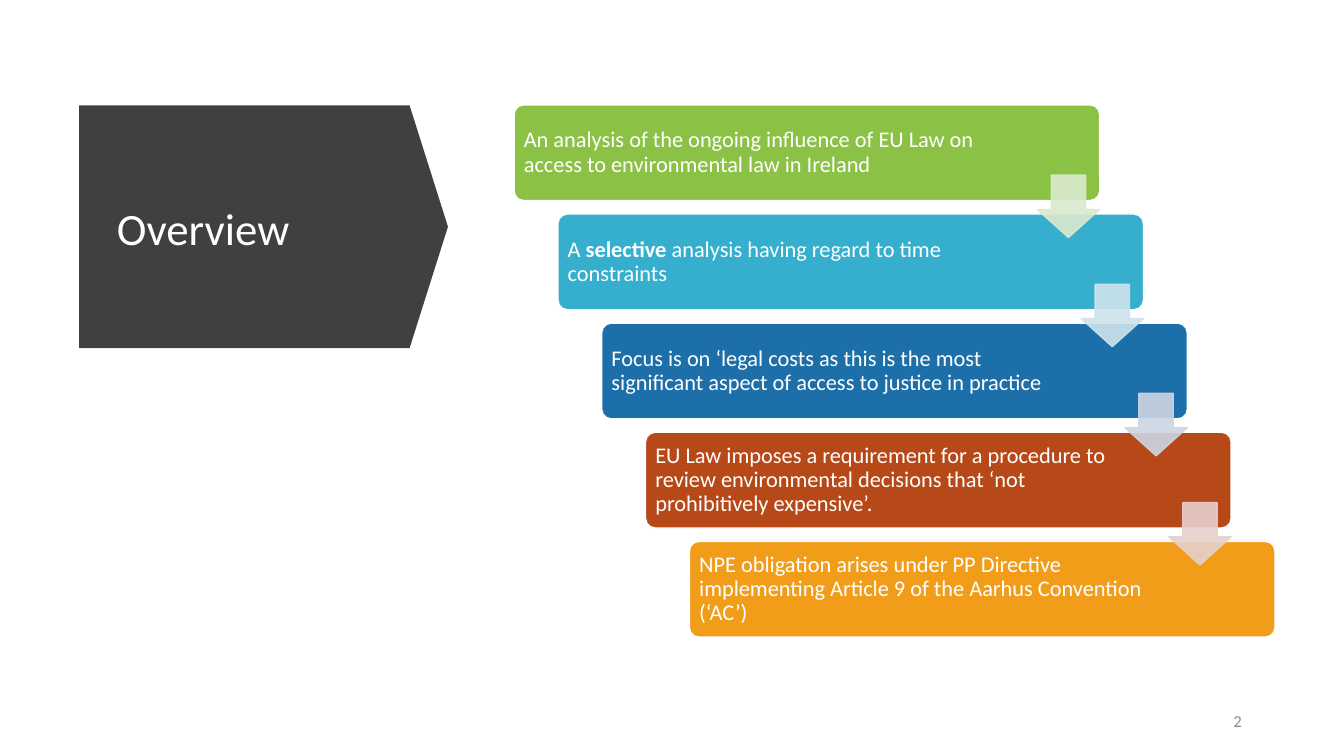
from dataclasses import dataclass

from lxml.etree import SubElement
from pptx import Presentation
from pptx.dml.color import RGBColor
from pptx.enum.shapes import MSO_SHAPE
from pptx.enum.text import MSO_ANCHOR, MSO_AUTO_SIZE, PP_ALIGN
from pptx.oxml.ns import qn
from pptx.util import Pt


@dataclass(frozen=True)
class Theme:
    font: str = "Calibri"
    title_size: int = 32
    body_size: int = 16
    number_size: int = 12
    white: str = "FFFFFF"
    banner: str = "404040"
    number: str = "8C8C8C"
    cards: tuple = ("8BC145", "36AFCE", "1D6FA9", "B74919", "F19D19")
    arrows: tuple = ("DAE9CF", "CEE3ED", "CDD5E2", "E6D0CC")
    arrow_opacity: int = 90


# Each step is a list of (text, bold) runs.
STEPS = [
    [("An analysis of the ongoing influence of EU Law on access to environmental law in Ireland", False)],
    [("A ", False), ("selective", True), (" analysis having regard to time constraints", False)],
    [("Focus is on ‘legal costs as this is the most significant aspect of access to justice in practice", False)],
    [("EU Law imposes a requirement for a procedure to review environmental decisions that "
      "‘not prohibitively expensive’.", False)],
    [("NPE obligation arises under PP Directive implementing Article 9 of the Aarhus Convention (‘AC’)", False)],
]

FIRST_LEFT, FIRST_TOP = 367.2, 74.9
STEP_RIGHT, STEP_DOWN = 31.3, 77.95
CARD_WIDTH, CARD_HEIGHT = 418.3, 68.4
ARROW_RIGHT, ARROW_DOWN, ARROW_SIZE = 373.7, 50.2, 44.6


class SlideBuilder:
    def __init__(self, slide, theme):
        self.slide = slide
        self.theme = theme

    def place(self, shape, left, top, width, height):
        shape.left, shape.top = Pt(left), Pt(top)
        shape.width, shape.height = Pt(width), Pt(height)

    def style(self, paragraph, size, color, alignment=PP_ALIGN.LEFT):
        paragraph.alignment = alignment
        paragraph.font.name = self.theme.font
        paragraph.font.size = Pt(size)
        paragraph.font.color.rgb = RGBColor.from_string(color)

    def shape(self, kind, left, top, width, height, fill, line=None, adjustments=()):
        shape = self.slide.shapes.add_shape(kind, Pt(left), Pt(top), Pt(width), Pt(height))
        shape.shadow.inherit = False
        for index, value in enumerate(adjustments):
            shape.adjustments[index] = value
        shape.fill.solid()
        shape.fill.fore_color.rgb = RGBColor.from_string(fill)
        if line:
            shape.line.color.rgb = RGBColor.from_string(line)
            shape.line.width = Pt(1)
        else:
            shape.line.fill.background()
        return shape

    def banner(self):
        """Draw the dark pointed block behind the title."""
        banner = self.shape(MSO_SHAPE.PENTAGON, 56.5, 75.2, 263.5, 173.5,
                            self.theme.banner, adjustments=(0.158,))
        self.slide.shapes.title._element.addprevious(banner._element)

    def title(self, text):
        title = self.slide.shapes.title
        self.place(title, 76.3, 95, 210.2, 140.4)
        frame = title.text_frame
        frame.text = text
        frame.auto_size = MSO_AUTO_SIZE.NONE
        frame.vertical_anchor = MSO_ANCHOR.MIDDLE
        paragraph = frame.paragraphs[0]
        paragraph.line_spacing = 0.9
        self.style(paragraph, self.theme.title_size, self.theme.white)

    def card(self, left, top, runs, fill):
        card = self.shape(MSO_SHAPE.ROUNDED_RECTANGLE, left, top, CARD_WIDTH, CARD_HEIGHT,
                          fill, self.theme.white, (0.1,))
        frame = card.text_frame
        frame.word_wrap = True
        frame.vertical_anchor = MSO_ANCHOR.MIDDLE
        frame.margin_left = frame.margin_top = frame.margin_bottom = Pt(5)
        frame.margin_right = Pt(80)
        paragraph = frame.paragraphs[0]
        paragraph.line_spacing = 0.9
        self.style(paragraph, self.theme.body_size, self.theme.white)
        for text, bold in runs:
            run = paragraph.add_run()
            run.text = text
            if bold:
                run.font.bold = True

    def arrow(self, left, top, color):
        arrow = self.shape(MSO_SHAPE.DOWN_ARROW, left, top, ARROW_SIZE, ARROW_SIZE,
                           color, color, (0.55, 0.45))
        for color_element in arrow._element.spPr.iter(qn("a:srgbClr")):
            SubElement(color_element, qn("a:alpha"), val=str(self.theme.arrow_opacity * 1000))

    def slide_number(self, text):
        box = self.slide.shapes.add_textbox(Pt(839.5), Pt(500.4), Pt(54.7), Pt(28.8))
        frame = box.text_frame
        frame.word_wrap = True
        frame.vertical_anchor = MSO_ANCHOR.MIDDLE
        frame.text = text
        self.style(frame.paragraphs[0], self.theme.number_size, self.theme.number, PP_ALIGN.RIGHT)


def main():
    presentation = Presentation()
    presentation.slide_width, presentation.slide_height = Pt(960), Pt(540)
    theme = Theme()
    builder = SlideBuilder(presentation.slides.add_slide(presentation.slide_layouts[5]), theme)

    builder.banner()
    builder.title("Overview")
    builder.slide_number("2")

    corners = [(FIRST_LEFT + i * STEP_RIGHT, FIRST_TOP + i * STEP_DOWN) for i in range(len(STEPS))]
    for (left, top), runs, fill in zip(corners, STEPS, theme.cards):
        builder.card(left, top, runs, fill)
    for (left, top), color in zip(corners, theme.arrows):
        builder.arrow(left + ARROW_RIGHT, top + ARROW_DOWN, color)

    presentation.save("out.pptx")


if __name__ == "__main__":
    main()
